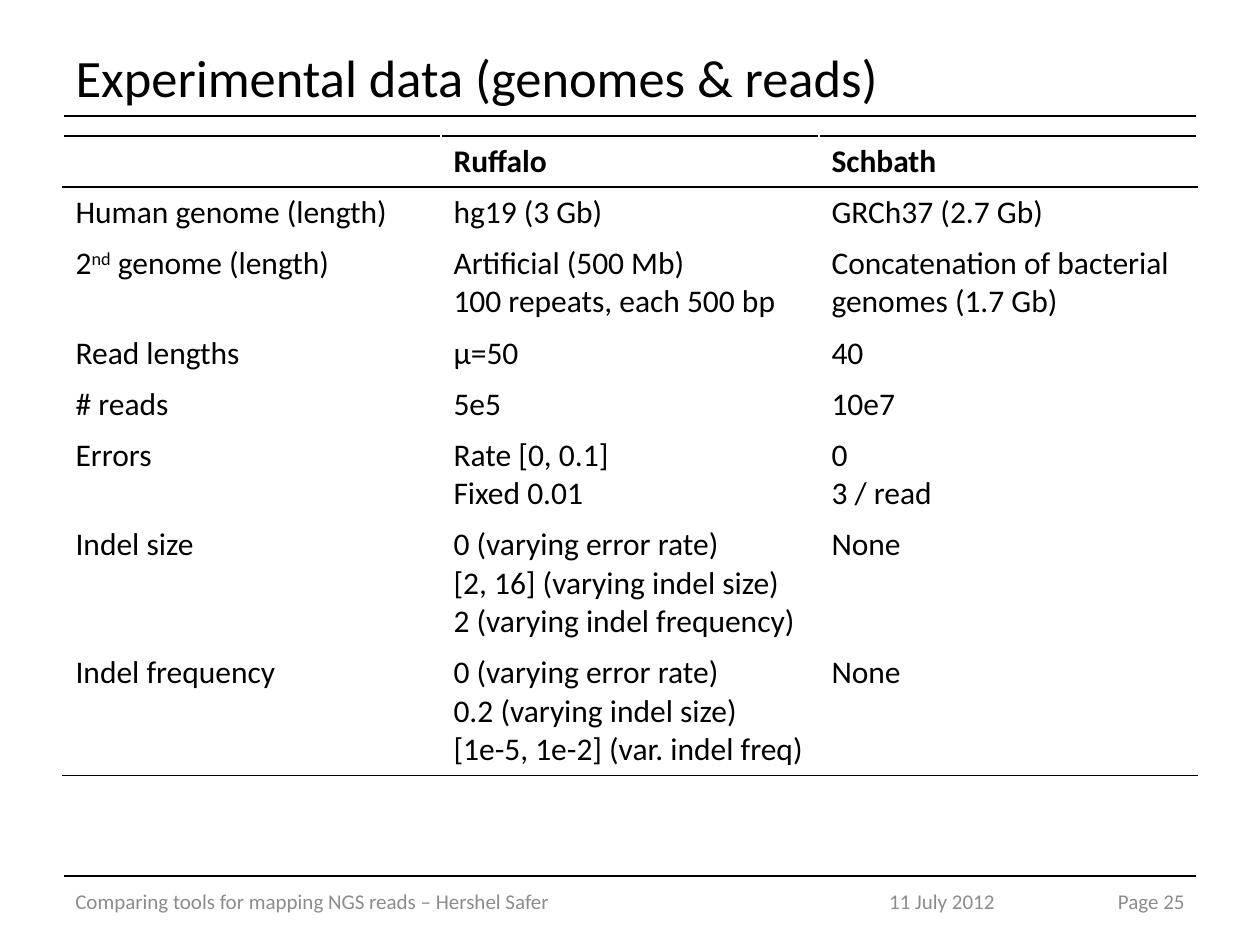
from lxml import etree
from pptx import Presentation
from pptx.dml.color import RGBColor
from pptx.enum import shapes, text
from pptx.oxml.ns import qn
from pptx.util import Pt

# Content: each cell is a list of lines; "^" marks off superscript text
TITLE = "Experimental data (genomes & reads)"
ROWS = [
    ([], ["Ruffalo"], ["Schbath"]),
    (["Human genome (length)"], ["hg19 (3 Gb)"], ["GRCh37 (2.7 Gb)"]),
    (["2^nd^ genome (length)"],
     ["Artificial (500 Mb)", "100 repeats, each 500 bp"],
     ["Concatenation of bacterial genomes (1.7 Gb)"]),
    (["Read lengths"], ["μ=50"], ["40"]),
    (["# reads"], ["5e5"], ["10e7"]),
    (["Errors"], ["Rate [0, 0.1]", "Fixed 0.01"], ["0", "3 / read"]),
    (["Indel size"],
     ["0 (varying error rate)", "[2, 16] (varying indel size)",
      "2 (varying indel frequency)"],
     ["None"]),
    (["Indel frequency"],
     ["0 (varying error rate)", "0.2 (varying indel size)",
      "[1e-5, 1e-2] (var. indel freq)"],
     ["None"]),
]
ALIGN = text.PP_ALIGN
FOOTER = [  # text, left, width, alignment
    ("Comparing tools for mapping NGS reads – Hershel Safer", 63, 756, ALIGN.LEFT),
    ("11 July 2012", 828, 228, ALIGN.CENTER),
    ("Page 25", 1066, 131, ALIGN.RIGHT),
]

# Layout in px, 126 to the inch
PX = 914400 // 126
MARGIN, WIDTH = 63, 1134
RULE_LEFT, RULE_RIGHT = 64, 1196
TITLE_RULE, FOOTER_RULE = 116, 876
TABLE_TOP, ROW_HEIGHT, LINE_HEIGHT = 136, 51, 38

FONT = "Calibri"
BLACK = RGBColor(0x00, 0x00, 0x00)
WHITE = RGBColor(0xFF, 0xFF, 0xFF)
GRAY = RGBColor(0x8C, 0x8C, 0x8C)


def px(*values):
    return [value * PX for value in values]


def write(frame, lines, size, color=BLACK, bold=False, align=ALIGN.LEFT):
    for i, line in enumerate(lines):
        para = frame.paragraphs[0] if i == 0 else frame.add_paragraph()
        para.alignment = align
        for j, part in enumerate(line.split("^")):
            span = para.add_run()
            span.text = part
            font = span.font
            font.name, font.size, font.bold = FONT, Pt(size), bold
            font.color.rgb = color
            if j % 2:
                span._r.get_or_add_rPr().set("baseline", "30000")


def add_rule(page, y):
    rule = page.shapes.add_connector(
        shapes.MSO_CONNECTOR.STRAIGHT, *px(RULE_LEFT, y, RULE_RIGHT, y))
    rule.line.color.rgb = BLACK
    rule.line.width = Pt(0.75)
    etree.SubElement(rule._element.spPr, qn("a:effectLst"))


def set_borders(cell, **colors):
    props = cell._tc.get_or_add_tcPr()
    for side in "LRTB":
        line = etree.SubElement(props, qn("a:ln" + side), w=str(Pt(1)))
        fill = etree.SubElement(line, qn("a:solidFill"))
        etree.SubElement(fill, qn("a:srgbClr"), val=str(colors.get(side, WHITE)))


def add_data_table(page):
    heights = [ROW_HEIGHT + LINE_HEIGHT * (max(map(len, row)) - 1) for row in ROWS]
    heights[2] = ROW_HEIGHT + LINE_HEIGHT
    table = page.shapes.add_table(
        len(ROWS), 3, *px(MARGIN, TABLE_TOP, WIDTH, sum(heights))).table
    table.first_row = table.horz_banding = False
    last = len(ROWS) - 1
    for r, row in enumerate(ROWS):
        table.rows[r].height = heights[r] * PX
        for c, lines in enumerate(row):
            cell = table.cell(r, c)
            set_borders(cell, T=BLACK if r < 2 else WHITE,
                        B=BLACK if r in (0, last) else WHITE)
            cell.fill.solid()
            cell.fill.fore_color.rgb = WHITE
            write(cell.text_frame, lines, 18, bold=r == 0)


def main():
    deck = Presentation()
    deck.slide_width, deck.slide_height = px(1260, 945)
    page = deck.slides.add_slide(deck.slide_layouts[5])

    # Title and rules
    title = page.shapes.title
    title.left, title.top, title.width, title.height = px(MARGIN, 38, WIDTH, 77)
    title.text_frame.vertical_anchor = text.MSO_ANCHOR.MIDDLE
    write(title.text_frame, [TITLE], 30)
    for y in (TITLE_RULE, FOOTER_RULE):
        add_rule(page, y)

    add_data_table(page)

    # Footer
    for line, left, width, align in FOOTER:
        box = page.shapes.add_textbox(*px(left, FOOTER_RULE, width, 50))
        box.text_frame.word_wrap = True
        box.text_frame.vertical_anchor = text.MSO_ANCHOR.MIDDLE
        write(box.text_frame, [line], 12, color=GRAY, align=align)

    deck.save("out.pptx")


if __name__ == "__main__":
    main()
